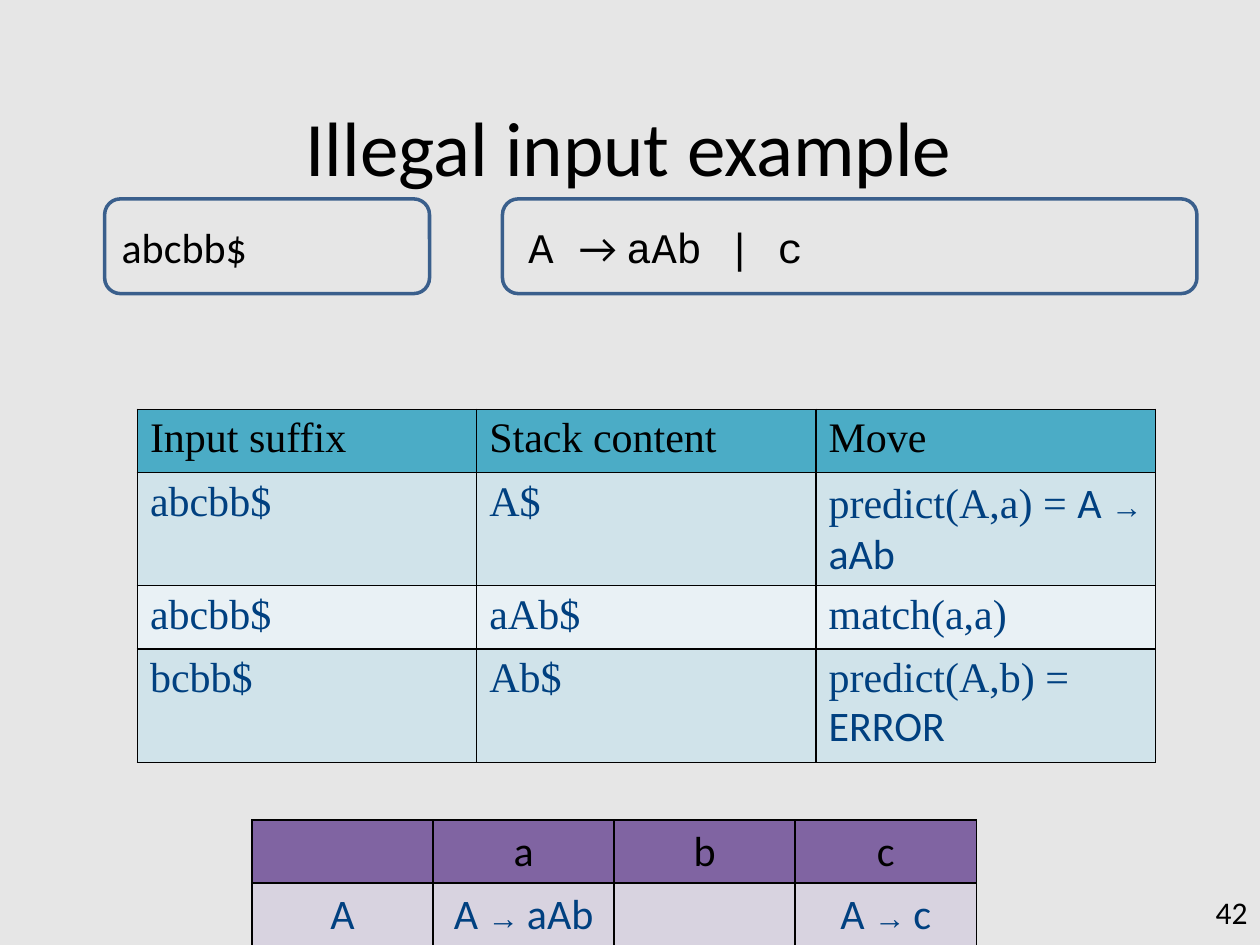
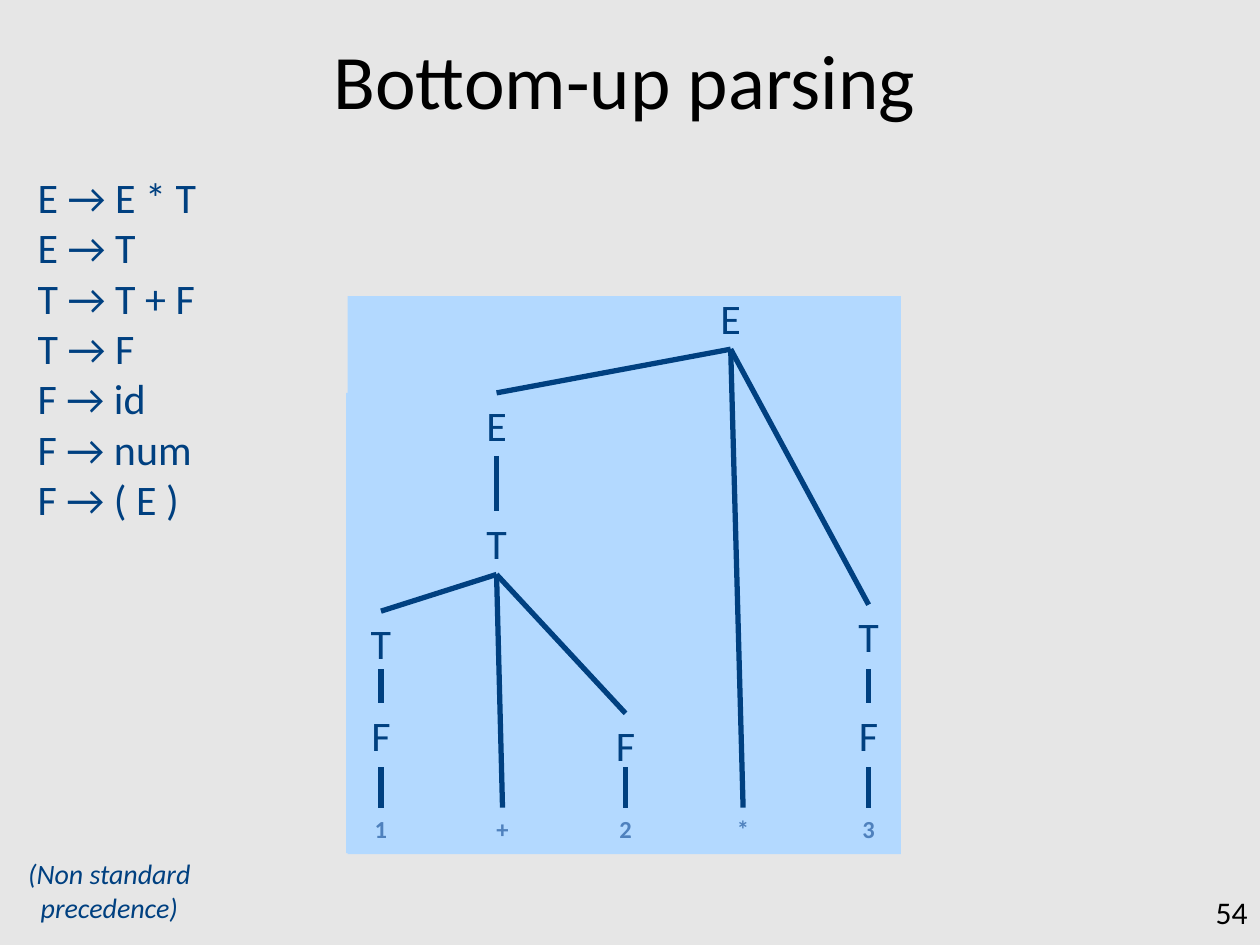
from dataclasses import dataclass

from pptx import Presentation as Deck
from pptx.dml.color import RGBColor as Rgb
from pptx.enum.shapes import MSO_CONNECTOR as Link, MSO_SHAPE as Form
from pptx.enum.text import MSO_ANCHOR as Anchor, PP_ALIGN as Align
from pptx.oxml import parse_xml
from pptx.oxml.ns import nsdecls, qn
from pptx.slide import Slide
from pptx.util import Cm, Pt

GREY = Rgb(0xE6, 0xE6, 0xE6)
BLACK = Rgb(0, 0, 0)
NAVY = Rgb(0x00, 0x40, 0x80)
STEEL = Rgb(0x3A, 0x5F, 0x8C)
BLUE = Rgb(0x4F, 0x81, 0xBD)
SKY = Rgb(0xB3, 0xD9, 0xFF)
TEAL = Rgb(0x4B, 0xAC, 0xC6)
ICE = Rgb(0xD0, 0xE3, 0xEA)
FROST = Rgb(0xE9, 0xF1, 0xF5)
PLUM = Rgb(0x80, 0x64, 0xA2)
LILAC = Rgb(0xD8, 0xD3, 0xE0)
SANS, MONO, SERIF = "Calibri", "Courier New", "Times New Roman"


@dataclass(frozen=True)
class Box:
    left: float
    top: float
    width: float
    height: float

    def cm(self) -> tuple:
        return Cm(self.left), Cm(self.top), Cm(self.width), Cm(self.height)


@dataclass(frozen=True)
class Style:
    font: str = SANS
    size: float = 24
    color: Rgb = NAVY
    bold: bool = False
    slant: bool = False
    align: Align = Align.LEFT


@dataclass(frozen=True)
class Part:
    text: str
    font: str = SANS
    size: float = 24


@dataclass(frozen=True)
class Grid:
    box: Box
    rows: tuple
    head: Rgb
    bands: tuple
    align: Align


@dataclass(frozen=True)
class Node:
    text: str
    x: float
    top: float
    kids: tuple = ()
    drop: float = 1.27


NOTE = Style(size=16, slant=True, align=Align.CENTER)
LABEL = Style(align=Align.CENTER)
LEAF = Style(size=14, color=BLUE, bold=True, align=Align.CENTER)
PLAIN = Style(color=BLACK)
TITLE = Style(size=44, color=BLACK, align=Align.CENTER)
COUNT = Style(size=18, color=BLACK, align=Align.RIGHT)
LEAF_TOP = 16.28
NODE_WIDTH, NODE_HEIGHT = 1.7, 1.27


def serif(text: str) -> tuple:
    return (Part(text, SERIF),)


def sans(text: str) -> tuple:
    return (Part(text),) if text else ()


def rule(right: str) -> tuple:
    return Part("A "), Part("→ ", SERIF, 18), Part(right)


MOVES = Grid(
    Box(2.77, 8.25, 20.52, 4.12),
    (
        tuple(map(serif, ("Input suffix", "Stack content", "Move"))),
        (serif("abcbb$"), serif("A$"), serif("predict(A,a) = ") + rule("aAb")),
        tuple(map(serif, ("abcbb$", "aAb$", "match(a,a)"))),
        (serif("bcbb$"), serif("Ab$"), serif("predict(A,b) = ") + sans("ERROR")),
    ),
    TEAL, (ICE, FROST), Align.LEFT,
)
LOOKUP = Grid(
    Box(5.08, 16.53, 14.6, 2.06),
    (tuple(map(sans, ("", "a", "b", "c"))),
     (sans("A"), rule("aAb"), (), rule("c"))),
    PLUM, (LILAC,), Align.CENTER,
)
RULES = ("E → E * T", "E → T", "T → T + F", "T → F",
         "F → id", "F → num", "F → ( E )")
PANELS = (
    Box(7.01, 5.97, 11.15, 11.25),
    Box(16.84, 11.81, 1.32, 2.44),
    Box(16.84, 14.25, 1.32, 2.95),
    Box(6.98, 7.92, 6.43, 9.27),
    Box(6.98, 10.49, 6.43, 6.71),
    Box(7.01, 14.17, 1.32, 2.95),
    Box(6.98, 12.04, 1.32, 2.24),
    Box(12.12, 14.17, 1.32, 3.02),
)


def leaf(text: str, x: float) -> Node:
    return Node(text, x, LEAF_TOP)


def chain(text: str, x: float, top: float, drop: float) -> Node:
    return Node("T", x, top, (Node("F", x, 14.17, (leaf(text, x),), 1.3),), drop)


SUM = Node("T", 10.01, 10.31, (
    chain("1", 7.68, 12.32, 1.17),
    leaf("+", 10.13),
    Node("F", 12.61, 14.38, (leaf("2", 12.61),), 1.09),
))
ROOT = Node("E", 14.73, 5.77, (
    Node("E", 10.01, 7.92, (SUM,)),
    leaf("*", 14.98),
    chain("3", 17.51, 12.19, 1.3),
))


def dress(frame, style: Style) -> None:
    for para in frame.paragraphs:
        para.alignment = style.align
        for run in para.runs:
            font = run.font
            font.name, font.size = style.font, Pt(style.size)
            font.bold, font.italic = style.bold, style.slant
            font.color.rgb = style.color


def fill_parts(frame, parts: tuple, color: Rgb, align: Align) -> None:
    para = frame.paragraphs[0]
    for part in parts:
        para.add_run().text = part.text
    dress(frame, Style(color=color, align=align))
    for run, part in zip(para.runs, parts):
        run.font.name, run.font.size = part.font, Pt(part.size)


def add_text(slide: Slide, box: Box, text: str, style: Style):
    frame = slide.shapes.add_textbox(*box.cm()).text_frame
    frame.word_wrap = True
    frame.text = text
    dress(frame, style)
    return frame


def add_slide(deck, title: str, box: Box, count: int) -> Slide:
    slide = deck.slides.add_slide(deck.slide_layouts[5])
    head = slide.shapes.title
    head.left, head.top, head.width, head.height = box.cm()
    head.text_frame.text = title
    head.text_frame.vertical_anchor = Anchor.MIDDLE
    dress(head.text_frame, TITLE)
    add_text(slide, Box(20.12, 17.88, 5.28, 0.76), str(count), COUNT)
    return slide


def add_frame(slide: Slide, box: Box, parts: tuple, indent: float = 0) -> None:
    shape = slide.shapes.add_shape(Form.ROUNDED_RECTANGLE, *box.cm())
    shape.shadow.inherit = False
    shape.fill.background()
    shape.line.color.rgb = STEEL
    shape.line.width = Pt(2)
    frame = shape.text_frame
    frame.vertical_anchor = Anchor.MIDDLE
    fill_parts(frame, parts, BLACK, Align.LEFT)
    frame.paragraphs[0]._p.get_or_add_pPr().set("marL", str(Cm(indent)))


def add_edges(cell) -> None:
    props = cell._tc.get_or_add_tcPr()
    for spot, side in enumerate("LRTB"):
        props.insert(spot, parse_xml(
            f'<a:ln{side} {nsdecls("a")} w="{Pt(1)}"><a:solidFill>'
            f'<a:srgbClr val="{BLACK}"/></a:solidFill></a:ln{side}>'))


def add_grid(slide: Slide, grid: Grid) -> None:
    rows = grid.rows
    table = slide.shapes.add_table(len(rows), len(rows[0]), *grid.box.cm()).table
    for i, row in enumerate(rows):
        for j, parts in enumerate(row):
            cell = table.cell(i, j)
            cell.fill.solid()
            cell.fill.fore_color.rgb = (
                grid.bands[(i - 1) % len(grid.bands)] if i else grid.head)
            add_edges(cell)
            fill_parts(cell.text_frame, parts, NAVY if i else BLACK, grid.align)


def add_panel(slide: Slide, box: Box) -> None:
    shape = slide.shapes.add_shape(Form.RECTANGLE, *box.cm())
    shape.shadow.inherit = False
    shape.fill.solid()
    shape.fill.fore_color.rgb = SKY
    shape.line.fill.background()


def add_line(slide: Slide, start: tuple, end: tuple) -> None:
    line = slide.shapes.add_connector(Link.STRAIGHT, *map(Cm, start + end))
    line.line.color.rgb = NAVY
    line.line.width = Pt(3)
    line._element.spPr.append(line._element.makeelement(qn("a:effectLst"), {}))


def add_tree(slide: Slide, node: Node) -> None:
    box = Box(node.x - NODE_WIDTH / 2, node.top, NODE_WIDTH, NODE_HEIGHT)
    add_text(slide, box, node.text, LABEL if node.kids else LEAF)
    for kid in node.kids:
        add_line(slide, (node.x, node.top + node.drop), (kid.x, kid.top))
        add_tree(slide, kid)


def build_input(deck) -> None:
    slide = add_slide(deck, "Illegal input example",
                      Box(1.88, 1.35, 21.59, 3.18), 42)
    add_frame(slide, Box(2.11, 4.01, 6.55, 1.91), sans("abcbb$"))
    add_frame(slide, Box(10.13, 4.01, 14, 1.91),
              (Part("A ", MONO), Part("→ "), Part("aAb | c", MONO)), 0.18)
    add_grid(slide, MOVES)
    add_grid(slide, LOOKUP)


def build_tree(deck) -> None:
    slide = add_slide(deck, "Bottom-up parsing", Box(1.8, 0, 21.59, 3.18), 54)
    for box in PANELS:
        add_panel(slide, box)
    frame = add_text(slide, Box(0.51, 3.33, 4.52, 7.44), "\n".join(RULES), Style())
    for para in frame.paragraphs:
        props = para._p.get_or_add_pPr()
        props.set("marL", str(Cm(1.27)))
        props.set("indent", str(-Cm(1.27)))
    add_tree(slide, ROOT)
    add_text(slide, Box(-0.13, 17.15, 4.67, 1.63),
             "(Non standard precedence)", NOTE)


def main() -> None:
    deck = Deck()
    deck.slide_width, deck.slide_height = Cm(25.4), Cm(19.05)
    back = deck.slide_master.background.fill
    back.solid()
    back.fore_color.rgb = GREY
    build_input(deck)
    build_tree(deck)
    deck.save("out.pptx")


if __name__ == "__main__":
    main()
